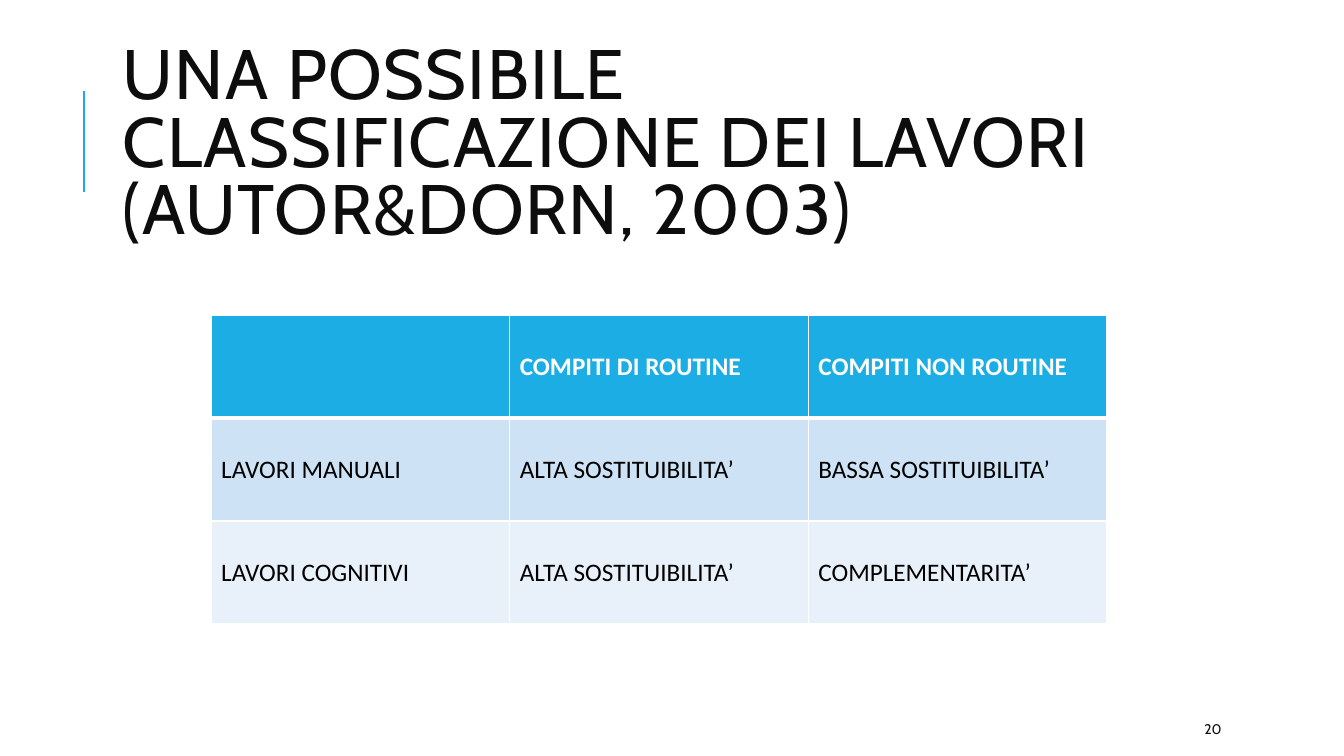
"""Build a slide that classifies jobs by type of task."""
from lxml import etree
from pptx import Presentation, util as u
from pptx.dml.color import RGBColor
from pptx.enum import shapes, text
from pptx.oxml.ns import qn

ACCENT, WHITE, INK, BLACK = "1CADE4", "FFFFFF", "0D0D0D", "000000"
ROW_FILLS = [ACCENT, "CDE3F5", "E8F1FA"]
ROWS = [
    ["", "COMPITI DI ROUTINE", "COMPITI NON ROUTINE"],
    ["LAVORI MANUALI", "ALTA SOSTITUIBILITA’", "BASSA SOSTITUIBILITA’"],
    ["LAVORI COGNITIVI", "ALTA SOSTITUIBILITA’", "COMPLEMENTARITA’"],
]


def rgb(color):
    """Turn a hex string into a colour."""
    return RGBColor.from_string(color)


def add_run(p, words, size, font, color, bold=False):
    """Append a styled run to a paragraph."""
    r = p.add_run()
    r.text = words
    r.font.size, r.font.name, r.font.bold = u.Pt(size), font, bold
    r.font.color.rgb = rgb(color)
    return r


def add_label(s, box, words, size):
    """Add a wrapped, vertically centred text box and return its paragraph and run."""
    tf = s.shapes.add_textbox(*map(u.Pt, box)).text_frame
    tf.word_wrap = True
    tf.vertical_anchor = text.MSO_ANCHOR.MIDDLE
    p = tf.paragraphs[0]
    return p, add_run(p, words, size, "Cabin", INK)


def add_title(s, box, words):
    """Add the title with the accent rule to its left."""
    left, top = box[:2]
    x, y = left - 20.7, top + 18.9
    rule = s.shapes.add_connector(
        shapes.MSO_CONNECTOR.STRAIGHT, u.Pt(x), u.Pt(y + 72), u.Pt(x), u.Pt(y))
    rule.line.color.rgb = rgb(ACCENT)
    rule.line.width = u.Pt(1.5)
    etree.SubElement(rule._element.spPr, qn("a:effectLst"))
    p, r = add_label(s, box, words, 50)
    p.line_spacing = 0.8
    r._r.get_or_add_rPr().set("spc", "100")


def set_borders(cell, widths):
    """Draw white borders of the given widths, keyed by side."""
    tcPr = cell._tc.get_or_add_tcPr()
    for i, side in enumerate(["L", "R", "T", "B"]):
        ln = etree.Element(qn(f"a:ln{side}"), w=str(u.Pt(widths.get(side, 1))))
        fill = etree.SubElement(ln, qn("a:solidFill"))
        etree.SubElement(fill, qn("a:srgbClr"), val=WHITE)
        tcPr.insert(i, ln)


def add_matrix(s, box, rows):
    """Add the table of jobs against tasks, with equal rows and columns."""
    table = s.shapes.add_table(len(rows), len(rows[0]), *map(u.Pt, box)).table
    for i, row in enumerate(rows):
        header = i == 0
        for j, words in enumerate(row):
            cell = table.cell(i, j)
            cell.vertical_anchor = text.MSO_ANCHOR.MIDDLE
            cell.fill.solid()
            cell.fill.fore_color.rgb = rgb(ROW_FILLS[i])
            set_borders(cell, {0: {"B": 3}, 1: {"T": 3}}.get(i, {}))
            if words:
                add_run(cell.text_frame.paragraphs[0], words, 18, "Calibri",
                        WHITE if header else BLACK, header)


def main():
    """Build and save the slide."""
    prs = Presentation()
    prs.slide_width, prs.slide_height = u.Pt(960), u.Pt(540)
    s = prs.slides.add_slide(prs.slide_layouts[6])
    add_title(s, (80.7, 46, 765.4, 118),
              "UNA POSSIBILE CLASSIFICAZIONE DEI LAVORI (AUTOR&DORN, 2003)")
    add_matrix(s, (150.8, 225.4, 640, 220.2), ROWS)
    add_label(s, (853.2, 509.8, 76.3, 21.6), "20", 10)
    prs.save("out.pptx")


if __name__ == "__main__":
    main()
